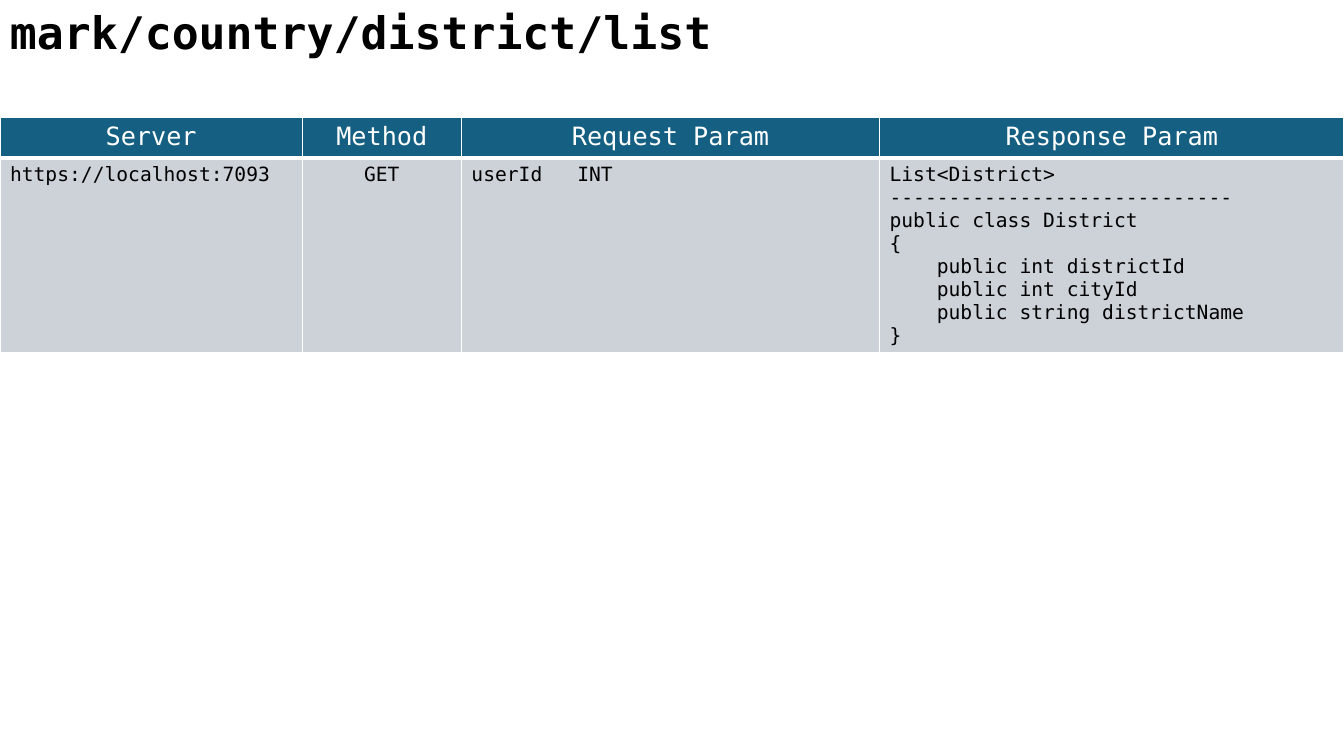
from lxml import etree
from pptx import Presentation
from pptx.dml.color import RGBColor
from pptx.enum.text import MSO_AUTO_SIZE, PP_ALIGN
from pptx.oxml.ns import qn
from pptx.util import Emu, Inches, Pt

FONT = "DejaVu Sans Mono"
COLORS = {"header": "156082", "body": "CCD2D8", "white": "FFFFFF", "black": "000000"}
COLUMNS = [3, 1.58, 4.15, 4.61]
ROWS = [0.41, 1.92]
PARAM_TAB = Inches(1.05)

TITLE = "mark/country/district/list"
HEADERS = ["Server", "Method", "Request Param", "Response Param"]
RESPONSE = """List<District>
-----------------------------
public class District
{
    public int districtId
    public int cityId
    public string districtName
}"""
ENDPOINT = ["https://localhost:7093", "GET", "userId\tINT", RESPONSE]


def write(tf, text, size, color, bold=False, align=PP_ALIGN.LEFT):
    """Write each line of text as a paragraph, with a stop for any tab."""
    for i, line in enumerate(text.split("\n")):
        p = tf.paragraphs[0] if i == 0 else tf.add_paragraph()
        p.alignment = align
        if "\t" in line:
            tabs = etree.SubElement(p._p.get_or_add_pPr(), qn("a:tabLst"))
            etree.SubElement(tabs, qn("a:tab"), pos=str(PARAM_TAB), algn="l")
        r = p.add_run()
        r.text = line
        r.font.name = FONT
        r.font.size = Pt(size)
        r.font.bold = bold
        r.font.color.rgb = RGBColor.from_string(COLORS[color])


def set_borders(cell, **widths):
    """Draw white borders; widths are points by side: L, R, T, B."""
    tc_pr = cell._tc.get_or_add_tcPr()
    for side, width in widths.items():
        ln = etree.SubElement(tc_pr, qn(f"a:ln{side}"), w=str(Pt(width)))
        fill = etree.SubElement(ln, qn("a:solidFill"))
        etree.SubElement(fill, qn("a:srgbClr"), val=COLORS["white"])


def set_fill(cell, color):
    cell.fill.solid()
    cell.fill.fore_color.rgb = RGBColor.from_string(COLORS[color])


def add_title(slide, left, top, width, height):
    tf = slide.shapes.add_textbox(left, top, width, height).text_frame
    tf.word_wrap = True
    tf.auto_size = MSO_AUTO_SIZE.SHAPE_TO_FIT_TEXT
    write(tf, TITLE, 32, "black", bold=True)


def add_endpoint_table(slide, left, top, width, height):
    table = slide.shapes.add_table(2, len(COLUMNS), left, top, width, height).table
    for column, share in zip(table.columns, COLUMNS):
        column.width = Emu(int(width * share / sum(COLUMNS)))
    for row, share in zip(table.rows, ROWS):
        row.height = Emu(int(height * share / sum(ROWS)))
    for c, (header, value) in enumerate(zip(HEADERS, ENDPOINT)):
        head, body = table.cell(0, c), table.cell(1, c)
        set_borders(head, L=1, R=1, T=1, B=3)
        set_borders(body, L=1, R=1, T=3, B=1)
        set_fill(head, "header")
        set_fill(body, "body")
        write(head.text_frame, header, 18, "white", align=PP_ALIGN.CENTER)
        align = PP_ALIGN.CENTER if header == "Method" else PP_ALIGN.LEFT
        write(body.text_frame, value, 14, "black", align=align)


def main():
    prs = Presentation()
    prs.slide_width, prs.slide_height = Inches(13.33), Inches(7.5)
    slide = prs.slides.add_slide(prs.slide_layouts[6])
    add_endpoint_table(slide, 0, Inches(1.16), prs.slide_width, Inches(sum(ROWS)))
    add_title(slide, 0, 0, Inches(8.34), Inches(0.64))
    prs.save("out.pptx")


if __name__ == "__main__":
    main()
